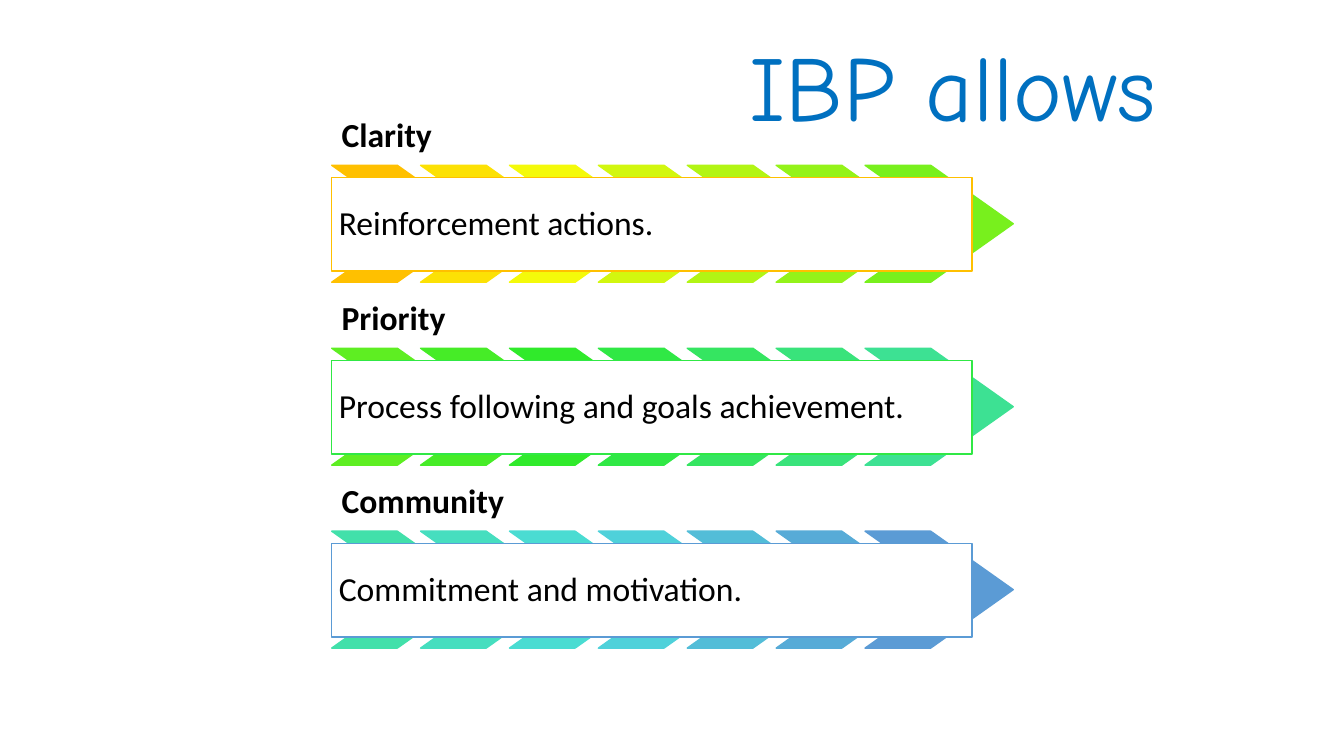
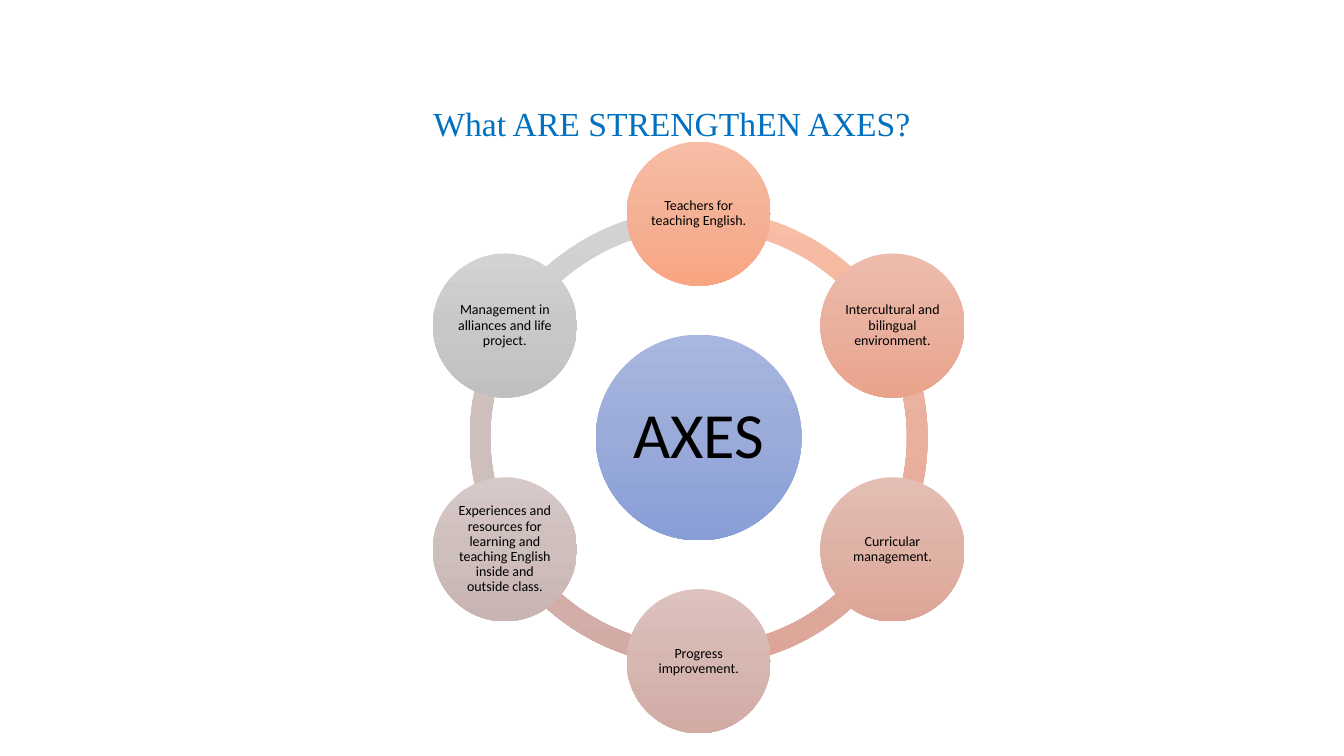
from copy import deepcopy
from math import cos, radians, sin

from pptx import Presentation
from pptx.dml.color import RGBColor
from pptx.enum.shapes import MSO_SHAPE
from pptx.enum.text import MSO_ANCHOR, MSO_AUTO_SIZE, PP_ALIGN
from pptx.oxml.ns import qn
from pptx.util import Inches, Pt

CHEVRON, RECTANGLE = MSO_SHAPE.CHEVRON, MSO_SHAPE.RECTANGLE
OVAL, BLOCK_ARC = MSO_SHAPE.OVAL, MSO_SHAPE.BLOCK_ARC
MIDDLE, BOTTOM = MSO_ANCHOR.MIDDLE, MSO_ANCHOR.BOTTOM
LEFT, CENTER = PP_ALIGN.LEFT, PP_ALIGN.CENTER
NO_AUTOFIT = MSO_AUTO_SIZE.NONE
TITLE_ONLY = 5

BODY_FONT = "Calibri"
BLACK = RGBColor(0x00, 0x00, 0x00)
WHITE = RGBColor(0xFF, 0xFF, 0xFF)
TITLE_BLUE = RGBColor(0x00, 0x70, 0xC0)


def colors(codes):
    return [RGBColor.from_string(code) for code in codes.split()]


# Heading, detail, frame colour, chevron colours from left to right
BENEFITS = [
    ("Clarity", "Reinforcement actions.", RGBColor(0xFF, 0xC0, 0x00),
     colors("FFC000 FCE105 F4FA0A D2F70F B2F514 94F319 78F01D")),
    ("Priority", "Process following and goals achievement.", RGBColor(0x30, 0xE8, 0x45),
     colors("5EEE22 46EC27 30EA2B 30E845 35E561 39E37B 3DE193")),
    ("Community", "Commitment and motivation.", RGBColor(0x5B, 0x9B, 0xD5),
     colors("42E0AA 46DEBF 4ADCD2 4FD1DA 53BDD8 57ABD7 5B9BD5")),
]
ROW_PITCH = 3.63 / 2
CHEVRON_STEP = 5.29 / 6

# Axis and its gradient, clockwise from the top
AXES = [
    ("Teachers for teaching English.", colors("F7BDA5 F5B196 F8A582")),
    ("Intercultural and bilingual environment.", colors("EDBCAC E9B09D EAA38B")),
    ("Curricular management.", colors("E4BEB4 DFB2A6 DDA597")),
    ("Progress improvement.", colors("DDC2BE D6B6B1 D2ABA4")),
    ("Experiences and resources for learning and teaching English inside and outside class.",
     colors("D7C9C8 CEBEBC C8B4B2")),
    ("Management in alliances and life project.", colors("D2D2D2 C8C8C8 C0C0C0")),
]
HUB_GRADIENT = colors("A8B7DF 9AABD9 889ED7")
ADJUSTMENT_PER_DEGREE = 0.6


def write(shape, text, size, font=BODY_FONT, color=BLACK, bold=False,
          align=LEFT, anchor=MIDDLE, inset=0.1):
    frame = shape.text_frame
    frame.text = text
    frame.word_wrap = True
    frame.auto_size = NO_AUTOFIT
    frame.vertical_anchor = anchor
    frame.margin_left = frame.margin_right = Inches(inset)
    frame.margin_top = frame.margin_bottom = Inches(inset)
    para = frame.paragraphs[0]
    para.alignment = align
    para.line_spacing = 0.9
    span = para.runs[0]
    span.font.name = font
    span.font.size = Pt(size)
    span.font.bold = bold
    span.font.color.rgb = color


def add_titled_page(deck, title, font, size, left, top, width):
    page = deck.slides.add_slide(deck.slide_layouts[TITLE_ONLY])
    box = page.shapes.title
    box.left, box.top = Inches(left), Inches(top)
    box.width, box.height = Inches(width), Inches(1.45)
    write(box, title, size, font, TITLE_BLUE, align=CENTER)
    return page


def add_plain_shape(page, kind, left, top, width, height):
    shape = page.shapes.add_shape(
        kind, Inches(left), Inches(top), Inches(width), Inches(height))
    shape.shadow.inherit = False
    return shape


def paint(shape, fill, line):
    shape.fill.solid()
    shape.fill.fore_color.rgb = fill
    shape.line.color.rgb = line
    shape.line.width = Pt(1)


def paint_gradient(shape, gradient):
    """Fill without outline, with evenly spaced colours from top to bottom."""
    shape.line.fill.background()
    shape.fill.gradient()
    shape.fill.gradient_angle = 270
    stop_list = shape._element.spPr.find(".//" + qn("a:gsLst"))
    while len(stop_list) < len(gradient):
        stop_list.append(deepcopy(stop_list[-1]))
    for index, (stop, color) in enumerate(zip(shape.fill.gradient_stops, gradient)):
        stop.position = index / (len(gradient) - 1)
        stop.color.rgb = color


def add_circle(page, center_x, center_y, diameter, gradient, text, size, inset):
    circle = add_plain_shape(page, OVAL, center_x - diameter / 2,
                             center_y - diameter / 2, diameter, diameter)
    paint_gradient(circle, gradient)
    write(circle, text, size, align=CENTER, inset=inset)


def add_benefit(page, left, top, heading, detail, frame_color, chevron_colors):
    """Heading above a row of chevrons, with the detail framed over them."""
    heading_box = page.shapes.add_textbox(
        Inches(left), Inches(top), Inches(6.27), Inches(0.57))
    write(heading_box, heading, 24, bold=True, anchor=BOTTOM)
    for index, color in enumerate(chevron_colors):
        chevron = add_plain_shape(
            page, CHEVRON, left + index * CHEVRON_STEP, top + 0.57, 1.47, 1.16)
        chevron.adjustments[0] = 0.706
        paint(chevron, color, color)
    detail_box = add_plain_shape(page, RECTANGLE, left, top + 0.69, 6.35, 0.93)
    paint(detail_box, WHITE, frame_color)
    write(detail_box, detail, 24, inset=0.07)


def add_axes_wheel(page, center_x, center_y):
    """Hub inside a ring of arcs that link the circles of the axes."""
    ring, orbit = 4.54, 2.22
    step = 360 / len(AXES)
    angles = [index * step - 90 for index in range(len(AXES))]
    for angle, (_, gradient) in reversed(list(zip(angles, AXES))):
        arc = add_plain_shape(page, BLOCK_ARC, center_x - ring / 2,
                              center_y - ring / 2, ring, ring)
        arc.adjustments[0] = angle % 360 * ADJUSTMENT_PER_DEGREE
        arc.adjustments[1] = (angle + step) % 360 * ADJUSTMENT_PER_DEGREE
        arc.adjustments[2] = 0.045
        paint_gradient(arc, gradient)
    add_circle(page, center_x, center_y, 2.04, HUB_GRADIENT, "AXES", 46, 0.06)
    for angle, (text, gradient) in zip(angles, AXES):
        add_circle(page, center_x + orbit * cos(radians(angle)),
                   center_y + orbit * sin(radians(angle)),
                   1.43, gradient, text, 10, 0.01)


def build_benefits_page(deck):
    page = add_titled_page(deck, "IBP allows", "Comic Neue", 66, 5.57, 0.18, 7.76)
    for row, benefit in enumerate(BENEFITS):
        add_benefit(page, 3.29, 1.07 + row * ROW_PITCH, *benefit)


def build_axes_page(deck):
    page = add_titled_page(deck, "What ARE STRENGThEN AXES?", "Times New Roman",
                           24, 0, 0.52, 13.33)
    add_axes_wheel(page, 6.93, 4.34)


def main():
    deck = Presentation()
    deck.slide_width, deck.slide_height = Inches(13.33), Inches(7.5)
    build_benefits_page(deck)
    build_axes_page(deck)
    deck.save("out.pptx")


if __name__ == "__main__":
    main()
